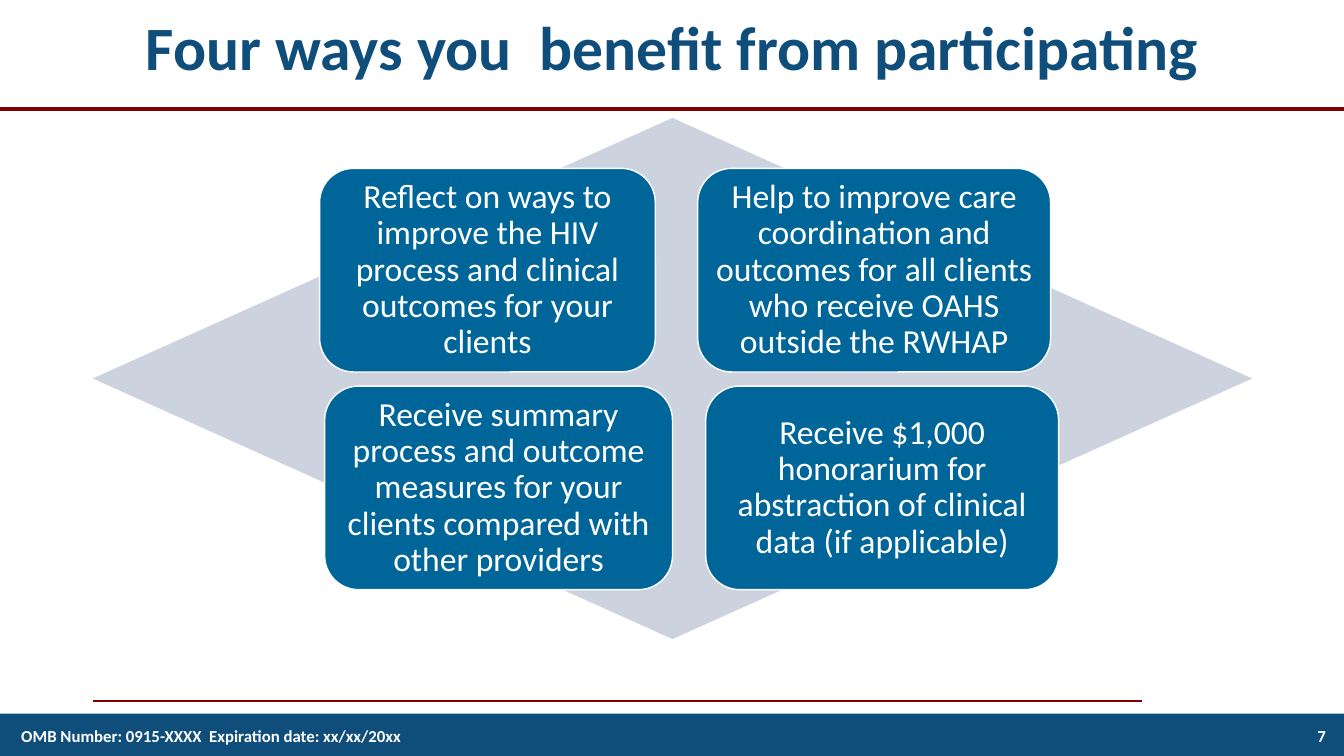
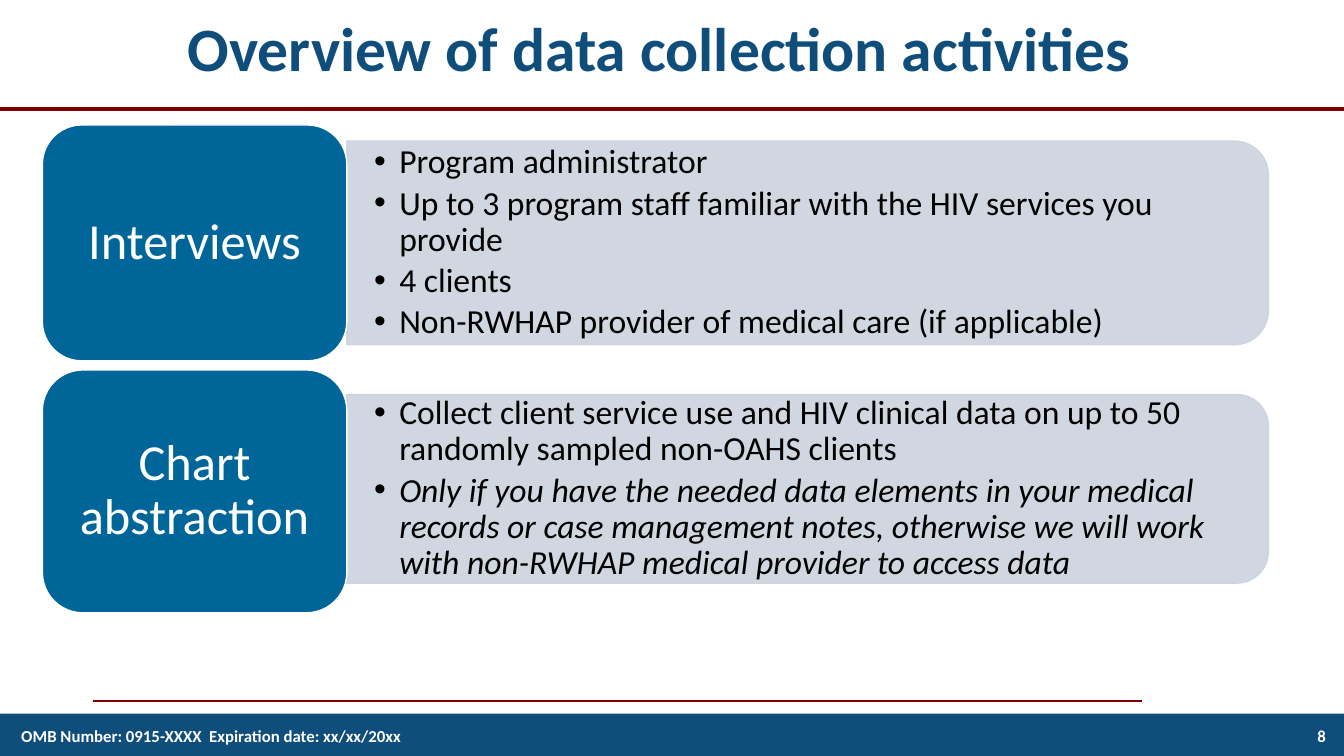
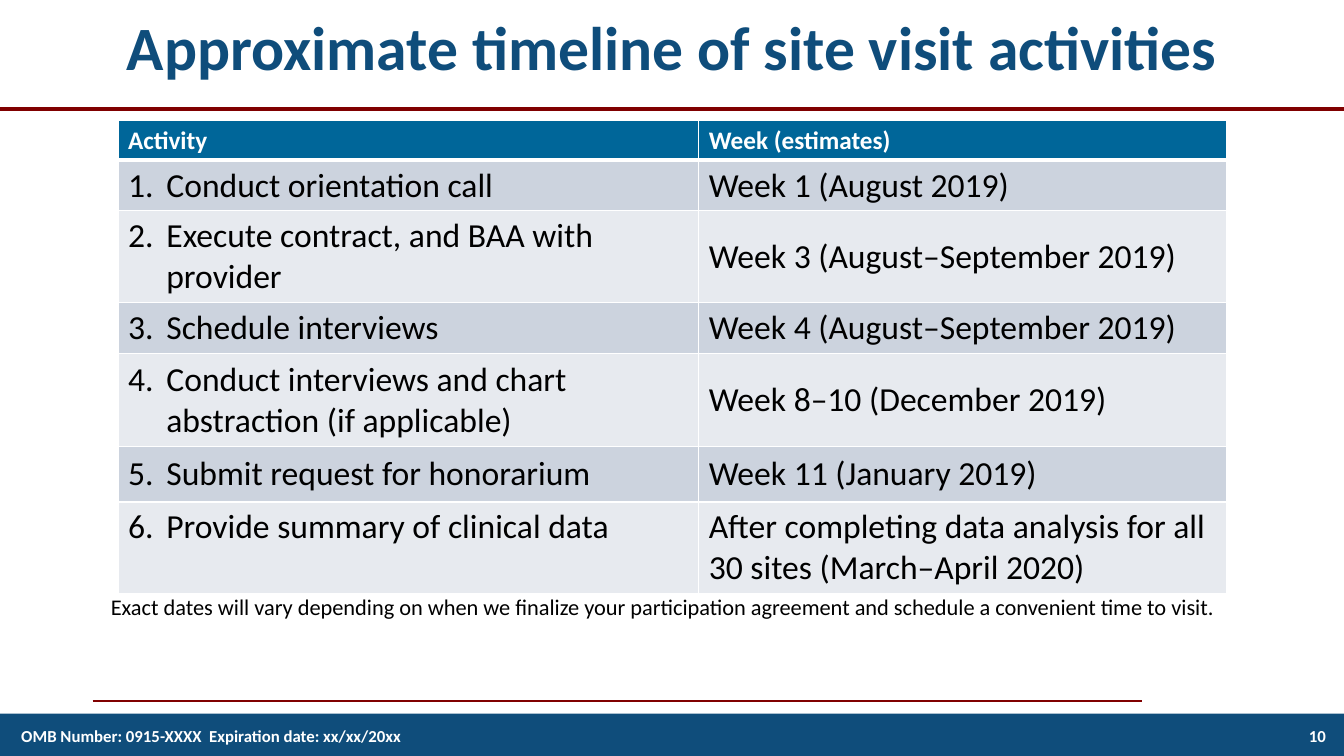
import pptx
import pptx.util
import pptx.dml.color
import pptx.enum.shapes
import pptx.enum.text
import pptx.oxml
import pptx.oxml.ns

Inches = pptx.util.Inches
Pt = pptx.util.Pt
SHAPE = pptx.enum.shapes.MSO_SHAPE
ALIGN = pptx.enum.text.PP_ALIGN
ANCHOR = pptx.enum.text.MSO_ANCHOR
qn = pptx.oxml.ns.qn

FONT = "Calibri"
COLORS = {
    "navy": "0F4D7B",
    "blue": "006699",
    "maroon": "800000",
    "mist": "CCD3DE",
    "pale": "E7EAEF",
    "white": "FFFFFF",
    "black": "000000",
}
SLIDE_WIDTH, SLIDE_HEIGHT = 13.33, 7.5
TITLE_BOX = (0.92, -0.22, 11.5, 1.45)
FOOTER = "OMB Number: 0915-XXXX  Expiration date: xx/xx/20xx"


def rgb(name):
    return pptx.dml.color.RGBColor.from_string(COLORS[name])


def make_element(tag, **attributes):
    element = pptx.oxml.parse_xml(f"<a:{tag} {pptx.oxml.ns.nsdecls('a')}/>")
    for key, value in attributes.items():
        element.set(key, str(value))
    return element


# Text
def write_text(para, text, size=24, color="black", bold=False, italic=False,
               align=None, spacing=None, after=None, indent=0, marker=None):
    """Fill one paragraph; marker is a bullet character or a list number."""
    props = para._p.get_or_add_pPr()
    if indent:
        props.set("marL", str(Inches(indent)))
        props.set("indent", str(-Inches(indent)))
    if isinstance(marker, int):
        props.append(make_element("buFont", typeface="+mj-lt"))
        props.append(make_element("buAutoNum", type="arabicPeriod", startAt=marker))
    elif marker:
        props.append(make_element("buFont", typeface="Arial"))
        props.append(make_element("buChar", char=marker))
    para.alignment = align
    para.line_spacing = spacing
    if after is not None:
        para.space_after = Pt(after)
    para.text = text
    for span in para.runs:
        span.font.name = FONT
        span.font.size = Pt(size)
        span.font.bold = bold
        span.font.italic = italic
        span.font.color.rgb = rgb(color)


def set_frame(frame, anchor=ANCHOR.MIDDLE, inset_x=0.1, inset_y=0.05):
    frame.word_wrap = True
    frame.vertical_anchor = anchor
    frame.margin_left = frame.margin_right = Inches(inset_x)
    frame.margin_top = frame.margin_bottom = Inches(inset_y)


def add_text_box(page, box, text, anchor=ANCHOR.MIDDLE, **style):
    frame = page.shapes.add_textbox(*map(Inches, box)).text_frame
    set_frame(frame, anchor)
    write_text(frame.paragraphs[0], text, **style)


# Shapes
def add_block(page, kind, box, fill, line=None):
    shape = page.shapes.add_shape(kind, *map(Inches, box))
    shape.shadow.inherit = False
    shape.fill.solid()
    shape.fill.fore_color.rgb = rgb(fill)
    if line:
        shape.line.color.rgb = rgb(line)
        shape.line.width = Pt(1)
    else:
        shape.line.fill.background()
    return shape


def add_card(page, box, text, size=24, inset_x=0.07):
    card = add_block(page, SHAPE.ROUNDED_RECTANGLE, box, "blue", "white")
    set_frame(card.text_frame, inset_x=inset_x, inset_y=0.07)
    write_text(card.text_frame.paragraphs[0], text, size=size, color="white",
               align=ALIGN.CENTER, spacing=0.9)


def add_rule(page, left, right, top, width):
    rule = page.shapes.add_connector(
        pptx.enum.shapes.MSO_CONNECTOR.STRAIGHT,
        Inches(left), Inches(top), Inches(right), Inches(top))
    rule.line.color.rgb = rgb("maroon")
    rule.line.width = Pt(width)
    rule._element.spPr.append(make_element("effectLst"))


# Shared page furniture
def add_page(deck, title, number, title_box=TITLE_BOX):
    page = deck.slides.add_slide(deck.slide_layouts[5])
    add_rule(page, 0.92, 11.33, 6.95, 1.5)
    add_block(page, SHAPE.RECTANGLE, (0, 7.08, SLIDE_WIDTH, 0.42), "navy")
    add_rule(page, 0, SLIDE_WIDTH, 1.08, 3)

    heading = page.shapes.title
    heading.left, heading.top, heading.width, heading.height = map(Inches, title_box)
    set_frame(heading.text_frame)
    write_text(heading.text_frame.paragraphs[0], title, size=44, color="navy",
               bold=True, align=ALIGN.CENTER, spacing=0.9)

    for box, text in (((10.25, 7.1, 3, 0.4), str(number)),
                      ((0, 7.1, 4.08, 0.4), FOOTER)):
        add_text_box(page, box, text, size=12, color="white", bold=True,
                     align=ALIGN.RIGHT)
    return page


# Four cards on a diamond
def add_benefits(page, box, cards):
    left, top, _, _ = box
    add_block(page, SHAPE.DIAMOND, box, "mist")
    for index, (offset, width, text) in enumerate(cards):
        row_top = top + 0.5 + 2.16 * (index // 2)
        add_card(page, (left + offset, row_top, width, 2.02), text)


# Label card with a bulleted panel at its right
def add_activity(page, box, label, panel_height, panel_middle, bullets):
    left, top, width, height = box
    label_width = 3.02
    panel_left = left + label_width
    panel_width = width - label_width

    # The panel is an upright shape turned a quarter, about its centre
    center = panel_left + panel_width / 2
    panel = add_block(page, SHAPE.ROUND_2_SAME_RECTANGLE,
                      (center - panel_height / 2, panel_middle - panel_width / 2,
                       panel_height, panel_width), "mist", "mist")
    panel.rotation = 90
    for color in panel._element.spPr.iter(qn("a:srgbClr")):
        color.append(make_element("alpha", val=90000))

    text_height = panel_height - 0.2
    frame = page.shapes.add_textbox(
        *map(Inches, (panel_left, panel_middle - text_height / 2,
                      panel_width - 0.1, text_height))).text_frame
    set_frame(frame, inset_x=0.27, inset_y=0.14)
    for index, (text, italic) in enumerate(bullets):
        para = frame.add_paragraph() if index else frame.paragraphs[0]
        write_text(para, text, italic=italic, spacing=0.9, after=3.6,
                   indent=0.25, marker="•")

    add_card(page, (left, top, label_width, height), label, size=36, inset_x=0.15)


# Timeline table
def set_borders(cell, bottom):
    props = cell._tc.get_or_add_tcPr()
    widths = {"lnL": 1, "lnR": 1, "lnT": 1, "lnB": bottom}
    for index, (tag, width) in enumerate(widths.items()):
        border = make_element(tag, w=Pt(width))
        fill = make_element("solidFill")
        fill.append(make_element("srgbClr", val=COLORS["white"]))
        border.append(fill)
        props.insert(index, border)


def add_timeline(page, box, column_widths, row_heights, rows):
    table = page.shapes.add_table(len(rows), len(column_widths),
                                  *map(Inches, box)).table
    for column, width in zip(table.columns, column_widths):
        column.width = Inches(width)
    for number, (row, height, texts) in enumerate(zip(table.rows, row_heights, rows)):
        row.height = Inches(height)
        header = number == 0
        for index, (cell, text) in enumerate(zip(row.cells, texts)):
            cell.fill.solid()
            cell.fill.fore_color.rgb = rgb(
                "blue" if header else "mist" if number % 2 else "pale")
            set_borders(cell, 3 if header else 1)
            cell.vertical_anchor = ANCHOR.MIDDLE
            para = cell.text_frame.paragraphs[0]
            if header:
                write_text(para, text, size=18, color="white", bold=True)
            elif index == 0:
                write_text(para, text, indent=0.38, marker=number)
            else:
                write_text(para, text)
    table.cell(len(rows) - 1, 0).vertical_anchor = ANCHOR.TOP


def main():
    deck = pptx.Presentation()
    deck.slide_width = Inches(SLIDE_WIDTH)
    deck.slide_height = Inches(SLIDE_HEIGHT)

    page = add_page(deck, "Four ways you  benefit from participating", 7)
    add_benefits(page, (0.92, 1.17, 11.5, 5.17), [
        (2.25, 3.33, "Reflect on ways to improve the HIV process and clinical "
                     "outcomes for your clients"),
        (6, 3.5, "Help to improve care coordination and outcomes for all clients "
                 "who receive OAHS outside the RWHAP"),
        (2.3, 3.45, "Receive summary process and outcome measures for your clients "
                    "compared with other providers"),
        (6.08, 3.5, "Receive $1,000 honorarium for abstraction of clinical data "
                    "(if applicable)"),
    ])

    page = add_page(deck, "Overview of data collection activities", 8,
                    (0.5, -0.21, 12.08, 1.45))
    add_activity(page, (0.42, 1.24, 12.16, 2.34), "Interviews", 2.02, 2.41, [
        ("Program administrator", False),
        ("Up to 3 program staff familiar with the HIV services you provide", False),
        ("4 clients", False),
        ("Non-RWHAP provider of medical care (if applicable)", False),
    ])
    add_activity(page, (0.42, 3.67, 12.16, 2.41), "Chart\vabstraction", 1.87, 4.85, [
        ("Collect client service use and HIV clinical data on up to 50 randomly "
         "sampled non-OAHS clients", False),
        ("Only if you have the needed data elements in your medical records or case "
         "management notes, otherwise we will work with non-RWHAP medical provider "
         "to access data", True),
    ])

    page = add_page(deck, "Approximate timeline of site visit activities", 10)
    add_timeline(page, (1.17, 1.19, 11, 4.25), (5.76, 5.24),
                 (0.4, 0.5, 0.91, 0.51, 0.92, 0.55, 0.91), [
        ("Activity", "Week (estimates)"),
        ("Conduct orientation call", "Week 1 (August 2019)"),
        ("Execute contract, and BAA with provider", "Week 3 (August–September 2019)"),
        ("Schedule interviews", "Week 4 (August–September 2019)"),
        ("Conduct interviews and chart abstraction (if applicable)",
         "Week 8–10 (December 2019)"),
        ("Submit request for honorarium", "Week 11 (January 2019)"),
        ("Provide summary of clinical data",
         "After completing data analysis for all 30 sites (March–April 2020)"),
    ])
    add_text_box(page, (1, 5.84, 11.25, 0.37),
                 "Exact dates will vary depending on when we finalize your "
                 "participation agreement and schedule a convenient time to visit.",
                 anchor=ANCHOR.TOP, size=16)

    deck.save("out.pptx")


if __name__ == "__main__":
    main()
